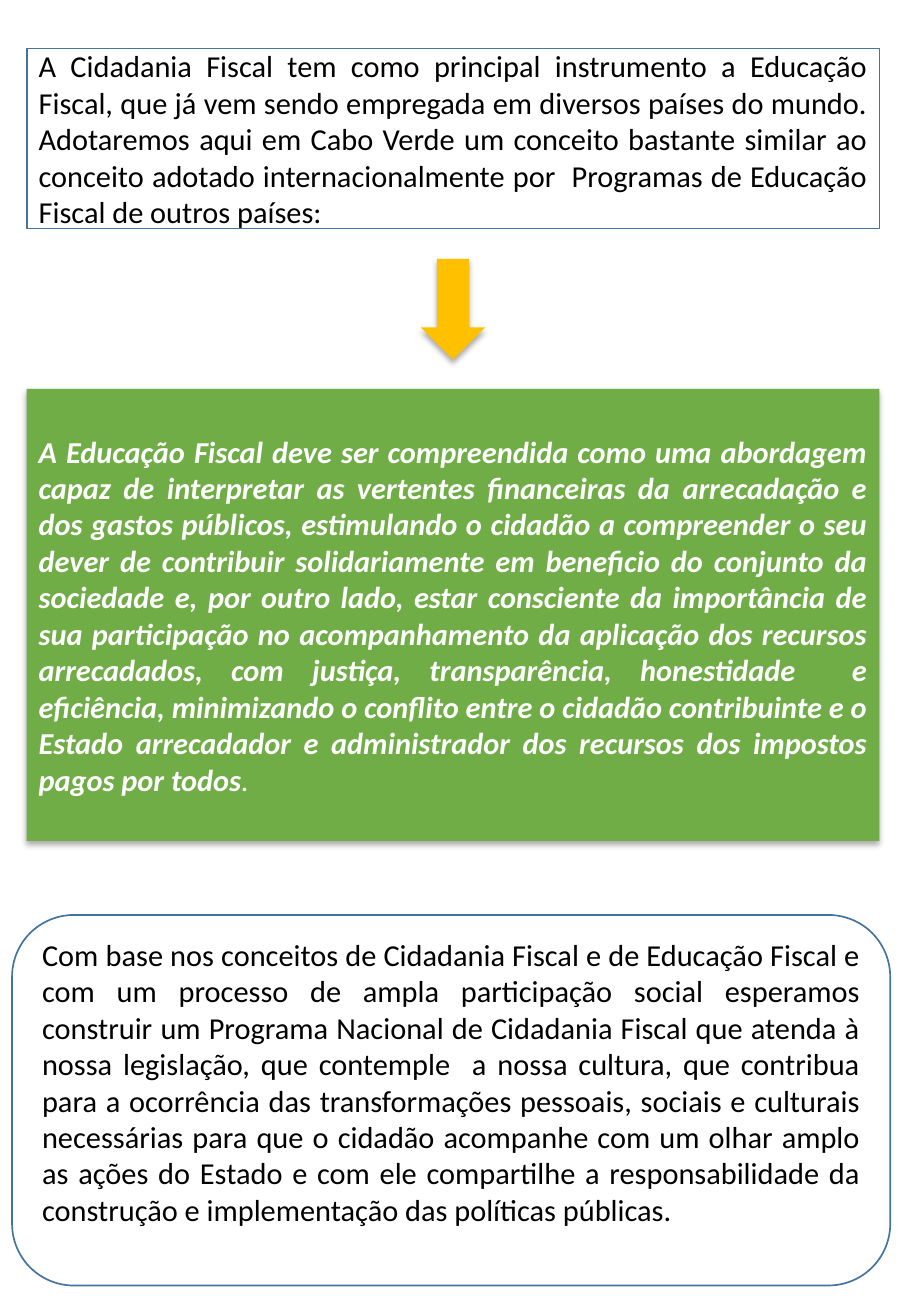
from dataclasses import dataclass

from lxml import etree
from pptx import Presentation
from pptx.dml.color import RGBColor as RGB
from pptx.enum.shapes import MSO_SHAPE as SHAPE
from pptx.enum.text import MSO_ANCHOR as ANCHOR, PP_ALIGN as ALIGN
from pptx.oxml.ns import qn
from pptx.util import Inches, Pt


@dataclass(frozen=True)
class Theme:
    font: str = "Calibri"
    size: int = 18
    ink: str = "000000"
    paper: str = "FFFFFF"
    outline: str = "43739E"
    green: str = "70AD47"
    amber: str = "FFC000"
    shadow: str = "000000"


INTRO = (
    "A Cidadania Fiscal tem como principal instrumento a Educação Fiscal, que já vem "
    "sendo empregada em diversos países do mundo. Adotaremos aqui em Cabo Verde um "
    "conceito bastante similar ao conceito adotado internacionalmente por  Programas "
    "de Educação Fiscal de outros países:"
)
CONCEPT = (
    "A Educação Fiscal deve ser compreendida como uma abordagem capaz de interpretar "
    "as vertentes financeiras da arrecadação e dos gastos públicos, estimulando o "
    "cidadão a compreender o seu dever de contribuir solidariamente em beneficio do "
    "conjunto da sociedade e, por outro lado, estar consciente da importância de sua "
    "participação no acompanhamento da aplicação dos recursos arrecadados, com "
    "justiça, transparência, honestidade  e eficiência, minimizando o conflito entre "
    "o cidadão contribuinte e o Estado arrecadador e administrador dos recursos dos "
    "impostos pagos por todos"
)
CLOSING = (
    "Com base nos conceitos de Cidadania Fiscal e de Educação Fiscal e com um processo "
    "de ampla participação social esperamos construir um Programa Nacional de "
    "Cidadania Fiscal que atenda à nossa legislação, que contemple  a nossa cultura, "
    "que contribua para a ocorrência das transformações pessoais, sociais e culturais "
    "necessárias para que o cidadão acompanhe com um olhar amplo as ações do Estado e "
    "com ele compartilhe a responsabilidade da construção e implementação das "
    "políticas públicas."
)


class Page:
    """One slide; positions and sizes are percentages of its width and height."""

    def __init__(self, prs, theme):
        self.prs, self.theme = prs, theme
        self.slide = prs.slides.add_slide(prs.slide_layouts[6])

    def shape(self, kind, center, top, width, height, fill, line=None):
        w, h = self.prs.slide_width / 100, self.prs.slide_height / 100
        sp = self.slide.shapes.add_shape(
            kind, round((center - width / 2) * w), round(top * h),
            round(width * w), round(height * h))
        sp.shadow.inherit = False
        sp.fill.solid()
        sp.fill.fore_color.rgb = RGB.from_string(fill)
        if line:
            sp.line.color.rgb = RGB.from_string(line)
            sp.line.width = Pt(1)
        else:
            sp.line.fill.background()
        return sp

    def drop_shadow(self, sp):
        effects = sp._element.spPr.find(qn("a:effectLst"))
        shadow = etree.SubElement(
            effects, qn("a:outerShdw"), blurRad=str(Pt(3.5)), dist=str(Pt(2.2)),
            dir="5400000", algn="ctr", rotWithShape="0")
        color = etree.SubElement(shadow, qn("a:srgbClr"), val=self.theme.shadow)
        etree.SubElement(color, qn("a:alpha"), val="32000")

    def text(self, sp, text, color, bottom=3.6):
        tf = sp.text_frame
        tf.word_wrap = True
        tf.vertical_anchor = ANCHOR.MIDDLE
        tf.margin_bottom = Pt(bottom)
        p = tf.paragraphs[0]
        p.alignment = ALIGN.JUSTIFY
        p.font.name = self.theme.font
        p.font.size = Pt(self.theme.size)
        p.font.color.rgb = RGB.from_string(color)
        p.add_run().text = text
        return p


def main():
    prs = Presentation()
    prs.slide_width, prs.slide_height = Inches(7.5), Inches(10.83)
    theme = Theme()
    page = Page(prs, theme)
    axis, column = 49.73, 93.6

    concept = page.shape(SHAPE.RECTANGLE, axis, 29.55, column, 34.35, theme.green)
    page.drop_shadow(concept)
    p = page.text(concept, CONCEPT, theme.paper)
    p.font.italic = True
    p.runs[0].font.bold = True
    p.add_run().text = "."

    intro = page.shape(SHAPE.RECTANGLE, axis, 3.69, column, 13.67,
                       theme.paper, theme.outline)
    page.text(intro, INTRO, theme.ink)

    arrow = page.shape(SHAPE.DOWN_ARROW, axis, 19.67, 7.07, 7.66, theme.amber)
    page.drop_shadow(arrow)

    closing = page.shape(SHAPE.ROUNDED_RECTANGLE, 49.53, 69.53, 96.4, 28.16,
                         theme.paper, theme.outline)
    page.text(closing, CLOSING, theme.ink, bottom=25.6)

    prs.save("out.pptx")


if __name__ == "__main__":
    main()
